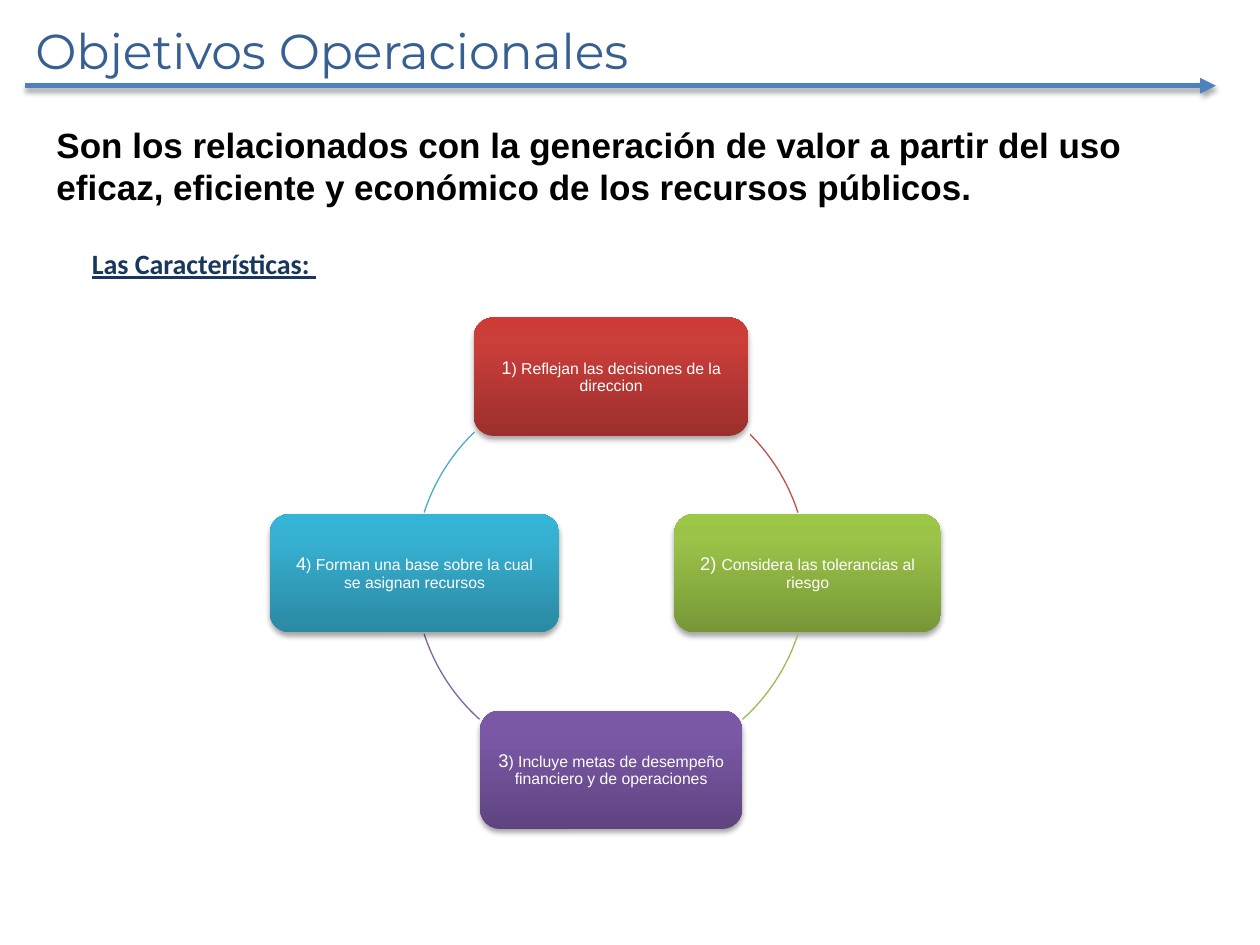
from math import cos, radians, sin

from lxml.etree import SubElement
from pptx import Presentation
from pptx.dml.color import RGBColor
from pptx.enum.shapes import MSO_CONNECTOR as Connector, MSO_SHAPE as Shape
from pptx.enum.text import MSO_ANCHOR as Anchor, MSO_AUTO_SIZE as AutoSize, PP_ALIGN as Align
from pptx.oxml.ns import qn
from pptx.util import Pt

COLORS = {
    "title": "376092", "arrow": "4F81BD", "heading": "17375E",
    "black": "000000", "white": "FFFFFF",
}

CARDS = [
    ("1", ") Reflejan las decisiones de la direccion", 157,
     ("9C2F2D", "CB3E3A", "CE3B37"), "C0504D", (315, 342)),
    ("2) ", "Considera las tolerancias al riesgo", 152.6,
     ("779737", "9BC348", "9DC746"), "9BBB59", (18, 48)),
    ("3", ") Incluye metas de desempeño financiero y de operaciones", 149.8,
     ("5F4480", "7B58A6", "7C57A8"), "8064A2", (132, 162)),
    ("4", ") Forman una base sobre la cual se asignan recursos", 165.6,
     ("2A88A2", "37B1D2", "34B4D6"), "4BACC6", (198, 226)),
]

RING_X, RING_Y, RING_RADIUS = 349.2, 327.6, 112.3
CARD_HEIGHT = 67.7


def add_text(para, text, size, color, font="Arial", bold=False, underline=False):
    span = para.add_run()
    span.text = text
    span.font.size = Pt(size)
    span.font.name = font
    span.font.bold = bold
    span.font.underline = underline
    span.font.color.rgb = RGBColor.from_string(COLORS[color])


def add_color(parent, color):
    return SubElement(parent, qn("a:srgbClr"), val=color)


def add_shadow(shape):
    effects = SubElement(shape._element.spPr, qn("a:effectLst"))
    shadow = SubElement(effects, qn("a:outerShdw"), blurRad=str(Pt(3.1)),
                        dist=str(Pt(1.8)), dir="5400000", rotWithShape="0")
    SubElement(add_color(shadow, COLORS["black"]), qn("a:alpha"), val="35000")


def add_gradient(shape, stops):
    gradient = SubElement(shape._element.spPr, qn("a:gradFill"), rotWithShape="1")
    stop_list = SubElement(gradient, qn("a:gsLst"))
    for position, color in zip((0, 80000, 100000), stops):
        add_color(SubElement(stop_list, qn("a:gs"), pos=str(position)), color)
    SubElement(gradient, qn("a:lin"), ang="16200000", scaled="0")


class SlideBuilder:
    def __init__(self, page):
        self.page = page
        self.shapes = page.shapes

    def title(self, text, left, top, width, height):
        box = self.shapes.title
        box.left, box.top, box.width, box.height = map(Pt, (left, top, width, height))
        frame = box.text_frame
        frame.auto_size = AutoSize.NONE
        frame.vertical_anchor = Anchor.TOP
        para = frame.paragraphs[0]
        para.alignment = Align.LEFT
        add_text(para, text, 28, "title", font="Montserrat")

    def text_box(self, text, left, top, width, height, anchor=Anchor.TOP, **style):
        box = self.shapes.add_textbox(*map(Pt, (left, top, width, height)))
        frame = box.text_frame
        frame.word_wrap = True
        frame.vertical_anchor = anchor
        add_text(frame.paragraphs[0], text, **style)

    def arrow(self, left, right, y):
        line = self.shapes.add_connector(Connector.STRAIGHT, *map(Pt, (left, y, right, y)))
        line.line.width = Pt(3)
        line.line.color.rgb = RGBColor.from_string(COLORS["arrow"])
        SubElement(line.line._get_or_add_ln(), qn("a:tailEnd"), type="triangle")
        add_shadow(line)

    def card(self, number, text, center_x, center_y, width, stops):
        box = self.shapes.add_shape(
            Shape.ROUNDED_RECTANGLE, Pt(center_x - width / 2),
            Pt(center_y - CARD_HEIGHT / 2), Pt(width), Pt(CARD_HEIGHT))
        add_gradient(box, stops)
        box.line.fill.background()
        add_shadow(box)
        frame = box.text_frame
        frame.word_wrap = True
        frame.vertical_anchor = Anchor.MIDDLE
        frame.margin_left = frame.margin_right = Pt(6.7)
        frame.margin_top = frame.margin_bottom = Pt(6.7)
        para = frame.paragraphs[0]
        para.alignment = Align.CENTER
        para.line_spacing = 0.9
        add_text(para, number, 10.5, "white")
        add_text(para, text, 9, "white")

    def arc(self, angles, color):
        arc = self.shapes.add_shape(
            Shape.ARC, Pt(RING_X - RING_RADIUS), Pt(RING_Y - RING_RADIUS),
            Pt(2 * RING_RADIUS), Pt(2 * RING_RADIUS))
        for index, angle in enumerate(angles):
            arc.adjustments[index] = angle * 0.6
        arc.fill.background()
        arc.line.color.rgb = RGBColor.from_string(color)
        arc.line.width = Pt(0.75)
        arc.shadow.inherit = False

    def cycle(self, cards):
        for index, (number, text, width, stops, line_color, angles) in enumerate(cards):
            angle = radians(360 / len(cards) * index - 90)
            center_x = RING_X + RING_RADIUS * cos(angle)
            center_y = RING_Y + RING_RADIUS * sin(angle)
            self.card(number, text, center_x, center_y, width, stops)
            self.arc(angles, line_color)


def main():
    deck = Presentation()
    deck.slide_width, deck.slide_height = Pt(720), Pt(540)
    builder = SlideBuilder(deck.slides.add_slide(deck.slide_layouts[5]))
    builder.text_box(
        "Son los relacionados con la generación de valor a partir del uso eficaz, "
        "eficiente y económico de los recursos públicos.",
        25.2, 67, 640.8, 55.4, size=20, color="black", bold=True)
    builder.text_box(
        "Las Características: ", 45.4, 139, 332, 23, anchor=Anchor.MIDDLE,
        size=16, color="heading", font="Calibri", bold=True, underline=True)
    builder.cycle(CARDS)
    builder.arrow(14.4, 694.8, 49)
    builder.title("Objetivos Operacionales", 13, 8, 680.4, 41)
    deck.save("out.pptx")


if __name__ == "__main__":
    main()
